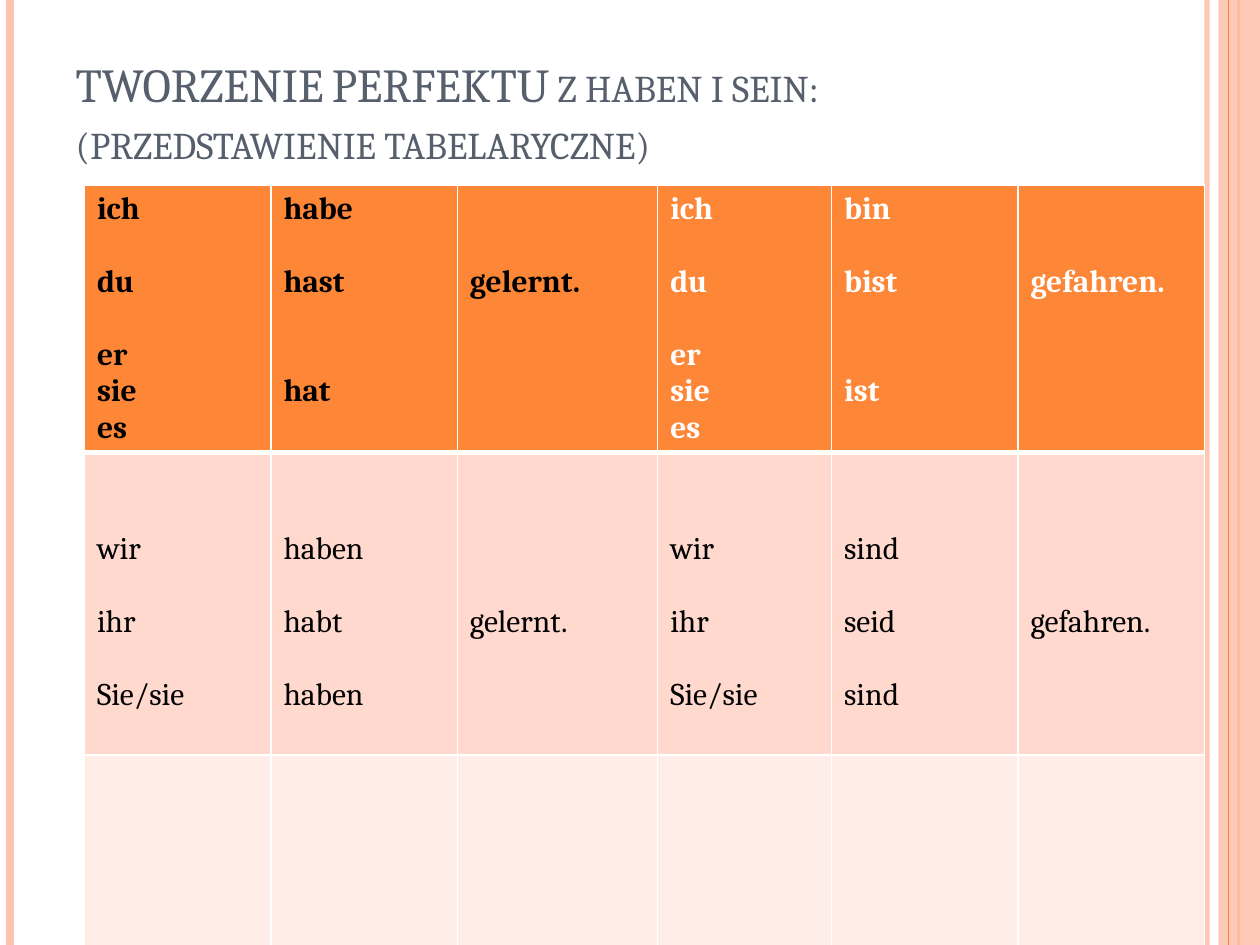
from copy import deepcopy

from lxml import etree
from pptx import Presentation
from pptx.dml.color import RGBColor
from pptx.enum.shapes import MSO_CONNECTOR, MSO_SHAPE
from pptx.enum.text import MSO_ANCHOR, MSO_AUTO_SIZE, PP_ALIGN
from pptx.oxml.ns import qn
from pptx.util import Inches, Pt

STRAIGHT, RECT = MSO_CONNECTOR.STRAIGHT, MSO_SHAPE.RECTANGLE
BOTTOM, TOP = MSO_ANCHOR.BOTTOM, MSO_ANCHOR.TOP
LEFT, NO_FIT = PP_ALIGN.LEFT, MSO_AUTO_SIZE.NONE

# Content
FONT = "Cambria"
TITLE = ["TWORZENIE PERFEKTU z haben i sein:", "(przedstawienie tabelaryczne)"]

# Each cell: entries as (line number, text)
PRONOUNS_SG = [(0, "ich"), (2, "du"), (4, "er"), (5, "sie"), (6, "es")]
PRONOUNS_PL = [(2, "wir"), (4, "ihr"), (6, "Sie/sie")]
ROWS = [
    [PRONOUNS_SG, [(0, "habe"), (2, "hast"), (5, "hat")], [(2, "gelernt.")],
     PRONOUNS_SG, [(0, "bin"), (2, "bist"), (5, "ist")], [(2, "gefahren.")]],
    [PRONOUNS_PL, [(2, "haben"), (4, "habt"), (6, "haben")], [(4, "gelernt.")],
     PRONOUNS_PL, [(2, "sind"), (4, "seid"), (6, "sind")], [(4, "gefahren.")]],
    [[]] * 6,
]
ROW_FILLS = ["FE8637", "FFD9CE", "FFEDE8"]
ROW_HEIGHTS = [2.12, 2.4, 1.91]
COL_WIDTHS = [1.48, 1.48, 1.59, 1.38, 1.48, 1.48]
LINE_PT = 20.8  # height of one 18 pt text line

# Vertical stripes: x, colour, width in points, opacity in percent
STRIPES_BACK = [(9.58, "FEC3AE", 3, 93), (0.08, "FEC3AE", 4.5, 100),
                (9.83, "FE8637", 1.5, 100)]
STRIPES_FRONT = [(9.75, "FE8637", 0.75, 100)]


def rgb(value):
    return RGBColor.from_string(value)


def set_alpha(sp, percent):
    color = next(sp._element.spPr.iter(qn("a:srgbClr")))
    etree.SubElement(color, qn("a:alpha"), val=str(percent * 1000))


def add_stripes(slide, stripes):
    for x, color, width, opacity in stripes:
        line = slide.shapes.add_connector(
            STRAIGHT, Inches(x), 0, Inches(x), Inches(7.5))
        line.line.color.rgb = rgb(color)
        line.line.width = Pt(width)
        if opacity < 100:
            set_alpha(line, opacity)
        etree.SubElement(line._element.spPr, qn("a:effectLst"))


def format_run(r, color, **values):
    r.font.color.rgb = rgb(color)
    for name, value in {"name": FONT, **values}.items():
        setattr(r.font, name, value)


def set_borders(cell, bottom):
    tc_pr = cell._tc.get_or_add_tcPr()
    for side, width in {"L": 1, "R": 1, "T": 1, "B": bottom}.items():
        ln = etree.SubElement(tc_pr, qn("a:ln" + side), w=str(Pt(width)))
        fill = etree.SubElement(ln, qn("a:solidFill"))
        etree.SubElement(fill, qn("a:srgbClr"), val="FFFFFF")


def fill_cell(cell, entries, color, bold):
    if not entries:
        return
    # Leading lines become the top margin, skipped lines paragraph spacing
    tf = cell.text_frame
    cell.margin_top = Inches(0.05) + Pt(entries[0][0] * LINE_PT)
    previous = entries[0][0] - 1
    for i, (line, text) in enumerate(entries):
        p = tf.add_paragraph() if i else tf.paragraphs[0]
        p.space_before = Pt((line - previous - 1) * LINE_PT)
        r = p.add_run()
        r.text = text
        format_run(r, color, size=Pt(18), bold=bold)
        previous = line


def add_title(slide):
    title = slide.shapes.title
    title.left, title.top = Inches(0.5), Inches(0.3)
    title.width, title.height = Inches(8.17), Inches(1.09)
    tf = title.text_frame
    tf.word_wrap, tf.auto_size, tf.vertical_anchor = True, NO_FIT, BOTTOM
    p = tf.paragraphs[0]
    p.alignment = LEFT
    for i, text in enumerate(TITLE):
        if i:
            p.add_line_break()
            p._p[-1].append(deepcopy(r._r.rPr))
        r = p.add_run()
        r.text = text
        format_run(r, "575F6D", size=Pt(27))
        r._r.rPr.set("cap", "small")


def add_conjugation_table(slide):
    table = slide.shapes.add_table(
        len(ROWS), len(COL_WIDTHS), Inches(0.67), Inches(1.47),
        Inches(sum(COL_WIDTHS)), Inches(sum(ROW_HEIGHTS))).table
    table.horz_banding = False
    for column, width in zip(table.columns, COL_WIDTHS):
        column.width = Inches(width)
    for i, row in enumerate(ROWS):
        header = i == 0
        table.rows[i].height = Inches(ROW_HEIGHTS[i])
        for j, entries in enumerate(row):
            cell = table.cell(i, j)
            set_borders(cell, 3 if header else 1)
            cell.fill.solid()
            cell.fill.fore_color.rgb = rgb(ROW_FILLS[i])
            cell.vertical_anchor = TOP
            color = "FFFFFF" if header and j >= 3 else "000000"
            fill_cell(cell, entries, color, header)


def main():
    prs = Presentation()
    prs.slide_width, prs.slide_height = Inches(10), Inches(7.5)
    slide = prs.slides.add_slide(prs.slide_layouts[5])

    # Side decoration
    add_stripes(slide, STRIPES_BACK)
    band = slide.shapes.add_shape(
        RECT, Inches(9.67), 0, Inches(0.33), Inches(7.5))
    band.shadow.inherit = False
    band.fill.solid()
    band.fill.fore_color.rgb = rgb("FEC3AE")
    band.line.fill.background()
    set_alpha(band, 87)
    add_stripes(slide, STRIPES_FRONT)

    # Title and table
    add_title(slide)
    add_conjugation_table(slide)
    prs.save("out.pptx")


if __name__ == "__main__":
    main()
